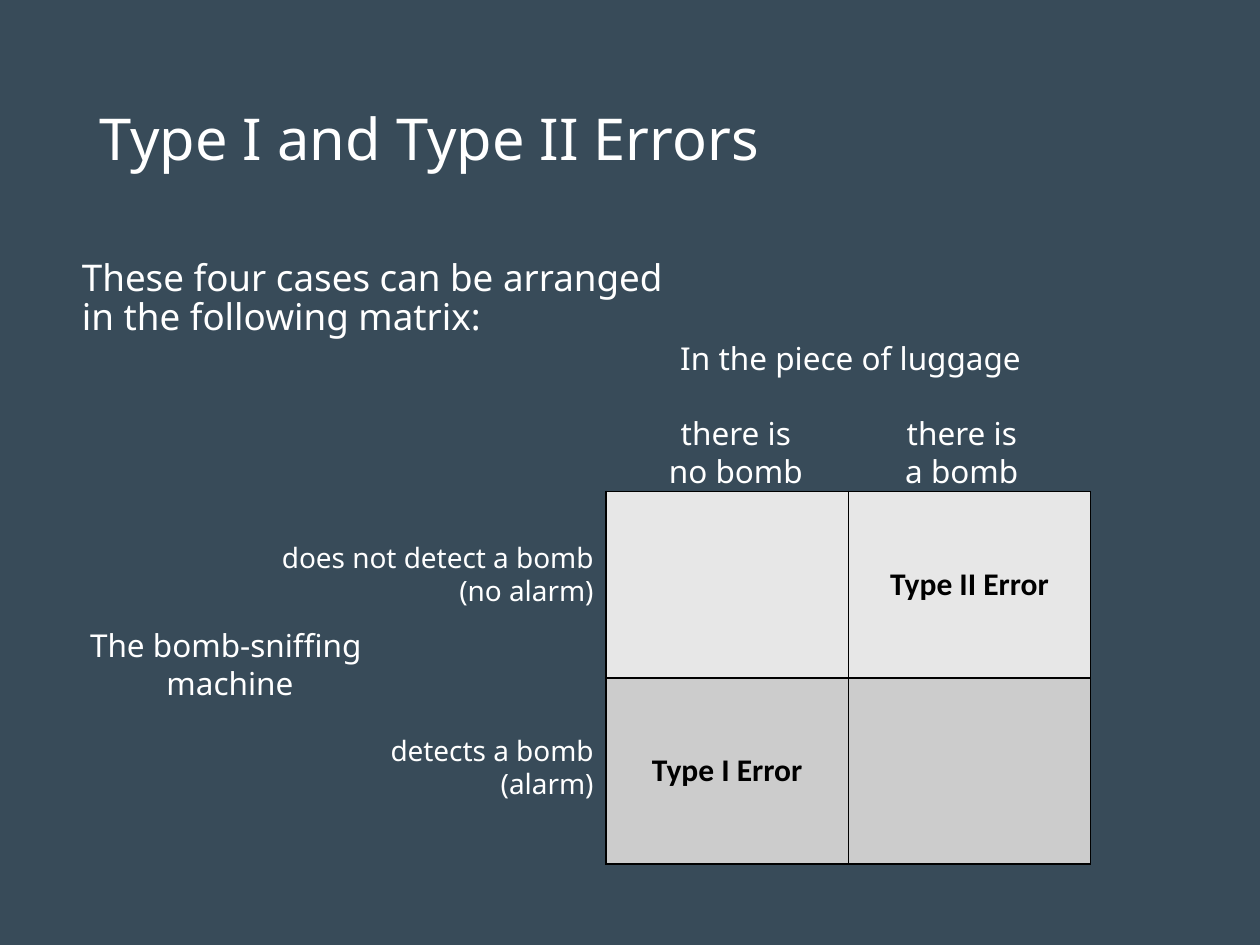
import pptx
import pptx.util
import pptx.dml.color
import pptx.enum.text
import pptx.oxml
import pptx.oxml.ns

Pt = pptx.util.Pt
ALIGN = pptx.enum.text.PP_ALIGN
ANCHOR = pptx.enum.text.MSO_ANCHOR
SIZE = pptx.enum.text.MSO_AUTO_SIZE
NS = pptx.oxml.ns.nsdecls("a")


def color(code):
    return pptx.dml.color.RGBColor.from_string(code)


def paint(item, code):
    item.fill.solid()
    item.fill.fore_color.rgb = color(code)


def place(shape, left, top, width, height):
    shape.left, shape.top = Pt(left), Pt(top)
    shape.width, shape.height = Pt(width), Pt(height)


def write(frame, text, size=18, font="Noto Sans", ink="FFFFFF", bold=False,
          align=ALIGN.LEFT, space=None, plain=False, tabs=(), gaps=()):
    for i, line in enumerate(text.split("\n")):
        para = frame.paragraphs[0] if i == 0 else frame.add_paragraph()
        para.text = line
        para.alignment = ALIGN.LEFT if "\t" in line else align
        para.line_spacing = space
        para.space_before = Pt(gaps[i] if i < len(gaps) else 0)
        props = para._p.get_or_add_pPr()
        if plain:
            props.set("marL", "0")
            props.set("indent", "0")
            props.append(pptx.oxml.parse_xml(f"<a:buNone {NS}/>"))
        if "\t" in line:
            stops = "".join(f'<a:tab pos="{Pt(t)}" algn="ctr"/>' for t in tabs)
            props.append(pptx.oxml.parse_xml(f"<a:tabLst {NS}>{stops}</a:tabLst>"))
        for run in para.runs:
            run.font.size = Pt(size)
            run.font.name = font
            run.font.bold = bold
            run.font.color.rgb = color(ink)


def fill(holder, spot, text, anchor, **form):
    place(holder, *spot)
    frame = holder.text_frame
    frame.auto_size = SIZE.NONE
    frame.vertical_anchor = anchor
    write(frame, text, space=0.9, **form)


def label(slide, spot, text, **form):
    box = slide.shapes.add_textbox(*map(Pt, spot))
    box.text_frame.word_wrap = True
    write(box.text_frame, text, **form)


def edge(cell):
    props = cell._tc.get_or_add_tcPr()
    for i, side in enumerate("LRTB"):
        props.insert(i, pptx.oxml.parse_xml(
            f'<a:ln{side} {NS} w="{Pt(1)}"><a:solidFill>'
            f'<a:srgbClr val="000000"/></a:solidFill></a:ln{side}>'))


def matrix(slide, spot, rows, fills):
    grid = slide.shapes.add_table(len(rows), len(rows[0]), *map(Pt, spot)).table
    grid.first_row = grid.horz_banding = False
    for r, row in enumerate(rows):
        for c, text in enumerate(row):
            cell = grid.cell(r, c)
            paint(cell, fills[r])
            edge(cell)
            cell.vertical_anchor = ANCHOR.MIDDLE
            if text:
                write(cell.text_frame, text, font="Calibri", ink="000000",
                      bold=True, align=ALIGN.CENTER)


def main():
    deck = pptx.Presentation()
    deck.slide_width, deck.slide_height = Pt(720), Pt(540)
    slide = deck.slides.add_slide(deck.slide_layouts[1])
    paint(slide.background, "384B59")

    fill(slide.shapes.title, (49.7, 28.8, 620.6, 104.4),
         "Type I and Type II Errors", ANCHOR.MIDDLE, size=33)
    fill(slide.placeholders[1], (39.6, 144.7, 594.7, 337.7),
         "These four cases can be arranged\nin the following matrix:",
         ANCHOR.TOP, size=21, plain=True)

    matrix(slide, (346.3, 280.8, 277, 213),
           [["", "Type II Error"], ["Type I Error", ""]], ["E7E7E7", "CCCCCC"])

    label(slide, (362.2, 190.1, 247.7, 116.6),
          "In the piece of luggage\n\tthere is\tthere is\n\tno bomb\ta bomb",
          align=ALIGN.CENTER, tabs=(51.2, 180.3), gaps=(0, 21.4))
    for top, text in ((305.3, "does not detect a bomb\n(no alarm)"),
                      (415.4, "detects a bomb\n(alarm)")):
        label(slide, (148.3, top, 198, 46.1), text, size=16, align=ALIGN.RIGHT)
    label(slide, (39.6, 354.2, 183.6, 51.1), "The bomb-sniffing \nmachine",
          align=ALIGN.CENTER)

    deck.save("out.pptx")


if __name__ == "__main__":
    main()
